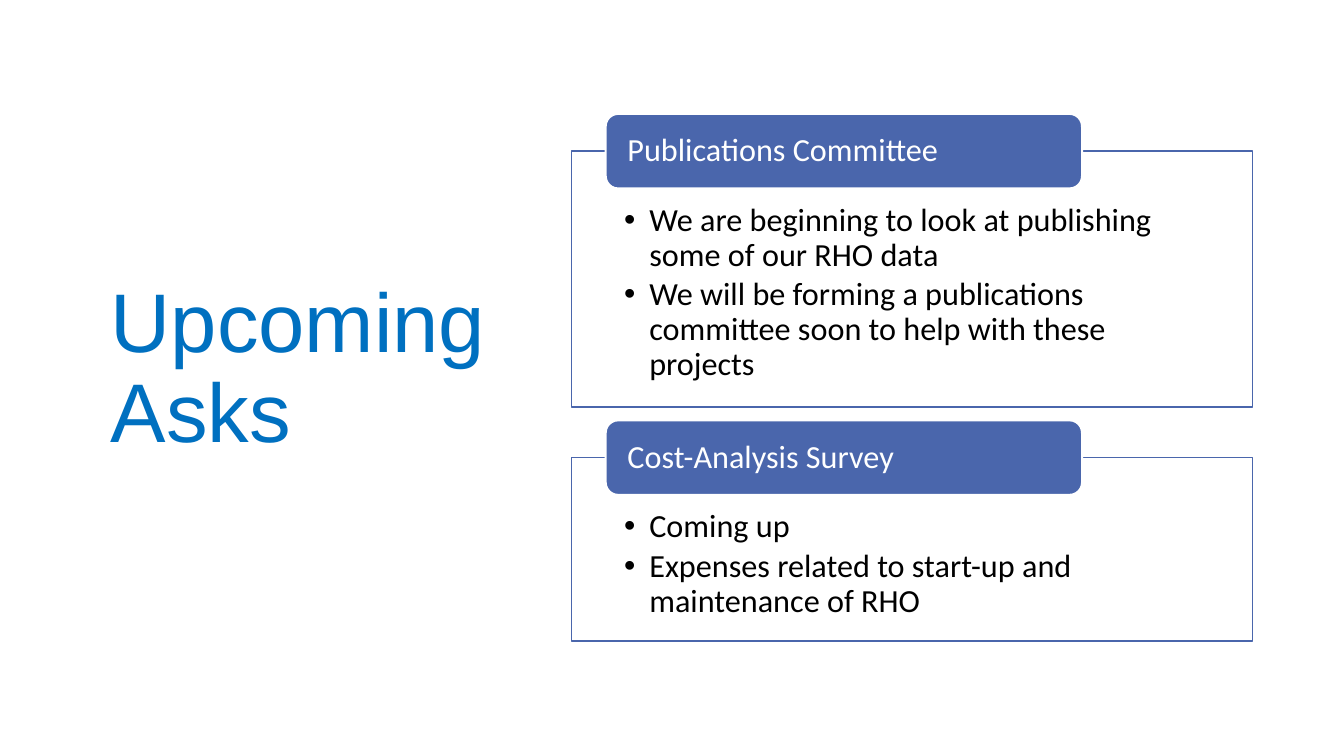
from lxml import etree
from pptx import Presentation
from pptx.dml.color import RGBColor
from pptx.enum import shapes, text
from pptx.oxml.ns import qn
from pptx.util import Inches, Pt

BLUE, WHITE, BLACK, TITLE_BLUE = "4A66AC", "FFFFFF", "000000", "0070C0"
TAB_HEIGHT = 0.74
TAB_OVERLAP = TAB_HEIGHT / 2


def color(hex_value):
    return RGBColor.from_string(hex_value)


def style_paragraph(paragraph, font_name, size, hex_value, space_after=0):
    paragraph.alignment = text.PP_ALIGN.LEFT
    paragraph.line_spacing = 0.9
    paragraph.space_after = Pt(space_after)
    paragraph.font.name = font_name
    paragraph.font.size = Pt(size)
    paragraph.font.color.rgb = color(hex_value)


def add_bullet(paragraph):
    properties = paragraph._p.get_or_add_pPr()
    properties.set("marL", str(Inches(0.25)))
    properties.set("indent", str(-Inches(0.25)))
    etree.SubElement(properties, qn("a:buFont")).set("typeface", "Arial")
    etree.SubElement(properties, qn("a:buChar")).set("char", "•")


def set_frame(frame, anchor, left, top, right, bottom):
    frame.word_wrap = True
    frame.vertical_anchor = anchor
    frame.margin_left, frame.margin_top = Inches(left), Inches(top)
    frame.margin_right, frame.margin_bottom = Inches(right), Inches(bottom)


def add_block(slide, kind, box, fill, line, line_width):
    shape = slide.shapes.add_shape(kind, *map(Inches, box))
    shape.shadow.inherit = False
    shape.fill.solid()
    shape.fill.fore_color.rgb = color(fill)
    shape.line.color.rgb = color(line)
    shape.line.width = Pt(line_width)
    return shape


def add_title(slide, box, words):
    frame = slide.shapes.add_textbox(*map(Inches, box)).text_frame
    set_frame(frame, text.MSO_ANCHOR.BOTTOM, 0.1, 0.05, 0.1, 0.05)
    frame.text = words
    style_paragraph(frame.paragraphs[0], "Arial", 59.4, TITLE_BLUE)


def add_card(slide, box, heading, items):
    left, top, width, height = box

    # Outlined panel with bullets
    panel = add_block(slide, shapes.MSO_SHAPE.RECTANGLE, box, WHITE, BLUE, 1)
    frame = panel.text_frame
    set_frame(frame, text.MSO_ANCHOR.TOP, 0.52, 0.52, 0.52, 0.18)
    frame.text = "\n".join(items)
    for paragraph in frame.paragraphs:
        style_paragraph(paragraph, "Calibri", 23, BLACK, space_after=3.45)
        add_bullet(paragraph)

    # Heading tab centred on the panel's top edge
    tab_box = (left + 0.05 * width, top - TAB_OVERLAP, 0.7 * width, TAB_HEIGHT)
    tab = add_block(slide, shapes.MSO_SHAPE.ROUNDED_RECTANGLE, tab_box, BLUE, WHITE, 1.5)
    set_frame(tab.text_frame, text.MSO_ANCHOR.MIDDLE, 0.18, 0, 0.18, 0)
    tab.text_frame.text = heading
    style_paragraph(tab.text_frame.paragraphs[0], "Calibri", 23, WHITE)


def main():
    presentation = Presentation()
    presentation.slide_width = Inches(13.33)
    presentation.slide_height = Inches(7.5)
    slide = presentation.slides.add_slide(presentation.slide_layouts[6])

    add_title(slide, (1, 2.87, 4.3, 1.75), "Upcoming\vAsks")

    # Cards stacked from top to bottom
    cards = [
        ("Publications Committee", 2.54, [
            "We are beginning to look at publishing some of our RHO data",
            "We will be forming a publications committee soon to help with these projects",
        ]),
        ("Cost-Analysis Survey", 1.82, [
            "Coming up",
            "Expenses related to start-up and maintenance of RHO",
        ]),
    ]
    top = 1.5
    for heading, height, items in cards:
        add_card(slide, (5.67, top, 6.75, height), heading, items)
        top += height + 0.5

    presentation.save("out.pptx")


if __name__ == "__main__":
    main()
